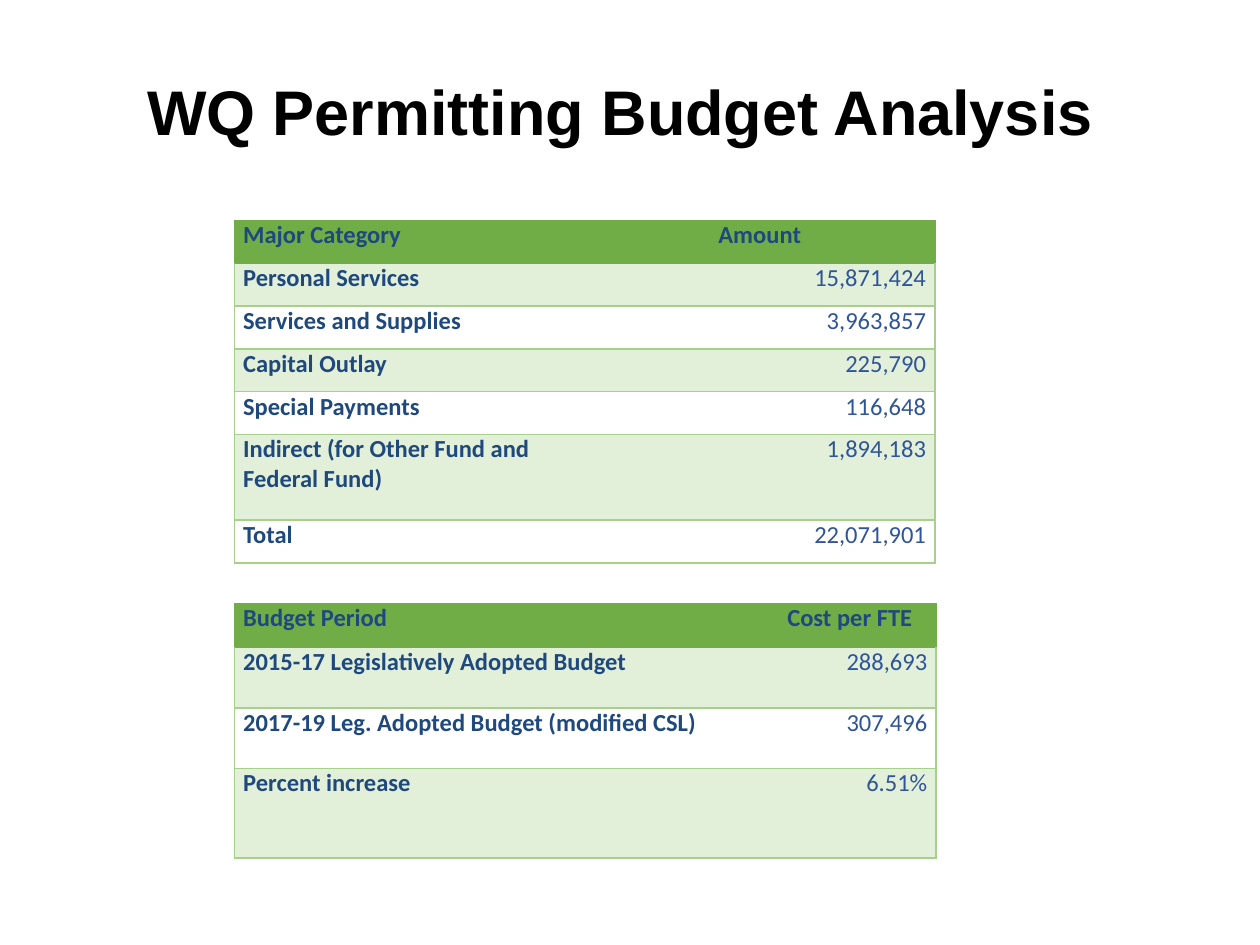
from lxml.etree import SubElement
from pptx import Presentation
from pptx.dml.color import RGBColor as Rgb
from pptx.enum.text import PP_ALIGN as Align
from pptx.oxml.ns import qn
from pptx.util import Inches, Pt

COLORS = {
    "title": "000000",
    "label": "1F497D",
    "amount": "2F5597",
    "header": "70AD47",
    "band": "E2EFD9",
    "grid": "A8D08D",
}


class BudgetSlide:
    def __init__(self, deck):
        self.slide = deck.slides.add_slide(deck.slide_layouts[6])

    def style_run(self, paragraph, font, size, color, bold):
        run_font = paragraph.runs[0].font
        run_font.name = font
        run_font.size = Pt(size)
        run_font.bold = bold
        run_font.color.rgb = Rgb.from_string(COLORS[color])

    def title(self, text, left, top, width, height):
        box = self.slide.shapes.add_textbox(
            Inches(left), Inches(top), Inches(width), Inches(height))
        box.text_frame.word_wrap = True
        box.text_frame.text = text
        heading = box.text_frame.paragraphs[0]
        heading.space_before = Pt(3)
        self.style_run(heading, "Arial", 36, "title", True)

    def border(self, cell, side, color):
        properties = cell._tc.get_or_add_tcPr()
        line = SubElement(properties, qn(f"a:ln{side}"), w=str(Pt(1)))
        if color is None:
            SubElement(line, qn("a:noFill"))
        else:
            fill = SubElement(line, qn("a:solidFill"))
            SubElement(fill, qn("a:srgbClr"), val=COLORS[color])

    def cell(self, cell, text, row, column):
        is_header = row == 0
        is_amount = column == 1 and not is_header
        cell.margin_left = cell.margin_right = Inches(0.07)
        cell.margin_top = cell.margin_bottom = 0
        cell.text_frame.text = text
        content = cell.text_frame.paragraphs[0]
        if column == 1:
            content.alignment = Align.CENTER if is_header else Align.RIGHT
        self.style_run(content, "Calibri", 14,
                       "amount" if is_amount else "label", not is_amount)

        edge = "header" if is_header else "grid"
        self.border(cell, "L", edge if column == 0 else None)
        self.border(cell, "R", edge if column == 1 else None)
        self.border(cell, "T", "header" if row <= 1 else "grid")
        self.border(cell, "B", edge)
        if is_header or row % 2:
            cell.fill.solid()
            cell.fill.fore_color.rgb = Rgb.from_string(
                COLORS["header" if is_header else "band"])
        else:
            cell.fill.background()

    def table(self, rows, left, top, widths, heights):
        table = self.slide.shapes.add_table(
            len(rows), len(widths), Inches(left), Inches(top),
            Inches(sum(widths)), Inches(sum(heights))).table
        for column, width in zip(table.columns, widths):
            column.width = Inches(width)
        for table_row, height in zip(table.rows, heights):
            table_row.height = Inches(height)
        for row, texts in enumerate(rows):
            for column, text in enumerate(texts):
                self.cell(table.cell(row, column), text, row, column)


def main():
    deck = Presentation()
    deck.slide_width, deck.slide_height = Inches(10), Inches(7.5)
    budget = BudgetSlide(deck)
    budget.title("WQ Permitting Budget Analysis", 1.07, 0.53, 7.83, 5.17)

    categories = [
        ("Major Category", "Amount"),
        ("Personal Services", "15,871,424"),
        ("Services and Supplies", "3,963,857"),
        ("Capital Outlay", "225,790"),
        ("Special Payments", "116,648"),
        ("Indirect (for Other Fund and Federal Fund)", "1,894,183"),
        ("Total", "22,071,901"),
    ]
    periods = [
        ("Budget Period", "Cost per FTE"),
        ("2015-17 Legislatively Adopted Budget", "288,693"),
        ("2017-19 Leg. Adopted Budget (modified CSL)", "307,496"),
        ("Percent increase", "6.51%"),
    ]
    budget.table(categories, 1.86, 1.75, [2.78, 2.78],
                 [0.34] * 5 + [0.68, 0.34])
    budget.table(periods, 1.86, 4.79, [4.2, 1.37], [0.35, 0.48, 0.48, 0.71])
    deck.save("out.pptx")


if __name__ == "__main__":
    main()
